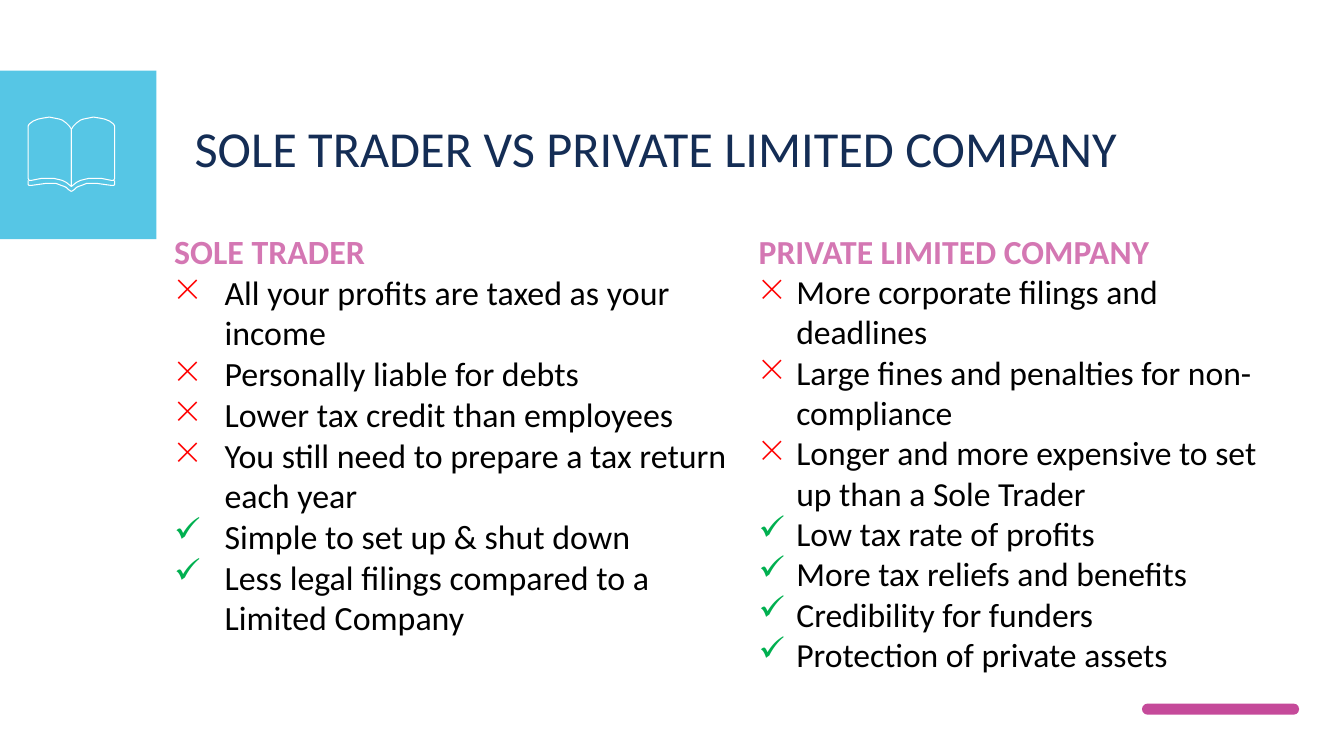
import lxml.etree
import pptx
import pptx.dml.color
import pptx.enum.shapes
import pptx.enum.text
import pptx.oxml.ns
import pptx.util
from pptx.util import Cm

COLOURS = {"band": "1EB3DD", "accent": "C54A9A", "title": "142D55", "heading": "D477B3",
           "body": "000000", "con": "FF0000", "pro": "00B050", "icon": "FFFFFF"}
MARKS = {"con": "×", "pro": "✓"}
ICON_UNITS = 86
LEAF = [(0, 12), (0, 69), (5, 65), (9, 63), (13, 62), (17, 61), (22, 61), (30, 61),
        (35, 62), (40, 63), (42, 63), (43, 61), (43, 9), (42, 7), (38, 4), (33, 2),
        (28, 1), (22, 0), (17, 1), (12, 2), (9, 3), (5, 6), (2, 9)]
COVER = [(43, 63), (43, 67), (42, 68), (40, 68), (33, 67), (26, 66), (22, 66), (15, 66),
         (10, 68), (7, 69), (5, 70), (3, 72), (0, 74)]
SOLE_TRADER = [
    ("con", "All your profits are taxed as your income"),
    ("con", "Personally liable for debts"),
    ("con", "Lower tax credit than employees"),
    ("con", "You still need to prepare a tax return each year"),
    ("pro", "Simple to set up & shut down"),
    ("pro", "Less legal filings compared to a Limited Company"),
]
LIMITED_COMPANY = [
    ("con", "More corporate filings and deadlines"),
    ("con", "Large fines and penalties for non-compliance"),
    ("con", "Longer and more expensive to set up than a Sole Trader"),
    ("pro", "Low tax rate of profits"),
    ("pro", "More tax reliefs and benefits"),
    ("pro", "Credibility for funders"),
    ("pro", "Protection of private assets"),
]


def colour(name):
    """Return the named colour."""
    return pptx.dml.color.RGBColor.from_string(COLOURS[name])


def add_child(parent, tag, **attributes):
    """Append a drawing element with the given attributes."""
    return lxml.etree.SubElement(parent, pptx.oxml.ns.qn(tag), attributes)


def write(para, text, size, color, bold=False, font="Calibri"):
    """Add formatted text to a paragraph."""
    span = para.add_run()
    span.text = text
    span.font.name = font
    span.font.size = pptx.util.Pt(size)
    span.font.bold = bold
    span.font.color.rgb = colour(color)


def add_bullet(para, kind, indent):
    """Give a paragraph a coloured mark and a hanging indent."""
    properties = para._p.get_or_add_pPr()
    properties.set("marL", str(indent))
    properties.set("indent", str(-indent))
    add_child(add_child(properties, "a:buClr"), "a:srgbClr", val=COLOURS[kind])
    add_child(properties, "a:buChar", char=MARKS[kind])


def add_block(page, box, preset, color):
    """Place a plain filled shape in the box."""
    block = page.shapes.add_shape(preset, *box)
    block.shadow.inherit = False
    block.fill.solid()
    block.fill.fore_color.rgb = colour(color)
    block.line.fill.background()
    return block


def add_book(page, left, top, width):
    """Draw an open book, each half mirrored about the spine."""
    book = page.shapes.add_group_shape()
    middle = ICON_UNITS / 2
    for points, closed in ((COVER, False), (LEAF, True)):
        for side in (-1, 1):
            outline = [(middle + side * across, down) for across, down in points]
            builder = book.shapes.build_freeform(*outline[0], scale=width / ICON_UNITS)
            builder.add_line_segments(outline[1:], close=closed)
            part = builder.convert_to_shape(left, top)
            part.shadow.inherit = False
            part.fill.background()
            part.line.color.rgb = colour("icon")
            part.line.width = pptx.util.Pt(0.75)


def add_icon_band(page, left, top, width, height):
    """Place the translucent band with the book on it."""
    band = add_block(page, (left, top, width, height),
                     pptx.enum.shapes.MSO_SHAPE.RECTANGLE, "band")
    shade = band._element.spPr.find(".//" + pptx.oxml.ns.qn("a:srgbClr"))
    add_child(shade, "a:alpha", val="75000")
    add_book(page, left + Cm(0.71), top + Cm(1.17), Cm(2.18))


def add_title(page, left, top, width, height):
    """Place and format the title."""
    title = page.shapes.title
    title.left, title.top, title.width, title.height = left, top, width, height
    frame = title.text_frame
    frame.auto_size = pptx.enum.text.MSO_AUTO_SIZE.NONE
    frame.vertical_anchor = pptx.enum.text.MSO_ANCHOR.TOP
    para = frame.paragraphs[0]
    para.alignment = pptx.enum.text.PP_ALIGN.LEFT
    para.line_spacing = 0.9
    write(para, "SOLE TRADER VS PRIVATE LIMITED COMPANY", size=36, color="title")


def add_column(page, box, heading, points, size, indent):
    """Place a heading and its marked points in the box."""
    frame = page.shapes.add_textbox(*box).text_frame
    frame.word_wrap = True
    write(frame.paragraphs[0], heading, size=size, color="heading", bold=True)
    for kind, text in points:
        para = frame.add_paragraph()
        add_bullet(para, kind, indent)
        write(para, text, size=size, color="body")


def main():
    """Build the comparison slide and save it."""
    deck = pptx.Presentation()
    deck.slide_width, deck.slide_height = Cm(33.87), Cm(19.05)
    page = deck.slides.add_slide(deck.slide_layouts[5])
    add_icon_band(page, Cm(0), Cm(1.78), Cm(3.94), Cm(4.25))
    accent = add_block(page, (Cm(28.78), Cm(17.73), Cm(3.96), Cm(0.28)),
                       pptx.enum.shapes.MSO_SHAPE.ROUNDED_RECTANGLE, "accent")
    accent.adjustments[0] = 0.5
    add_title(page, Cm(4.65), Cm(3), Cm(26.8), Cm(1.93))
    add_column(page, (Cm(4.14), Cm(5.69), Cm(14.76), Cm(12.98)),
               "SOLE TRADER", SOLE_TRADER, size=24.2, indent=Cm(1.27))
    add_column(page, (Cm(18.87), Cm(5.69), Cm(13.34), Cm(12.24)),
               "PRIVATE LIMITED COMPANY", LIMITED_COMPANY, size=24, indent=Cm(0.95))
    deck.save("out.pptx")


if __name__ == "__main__":
    main()
